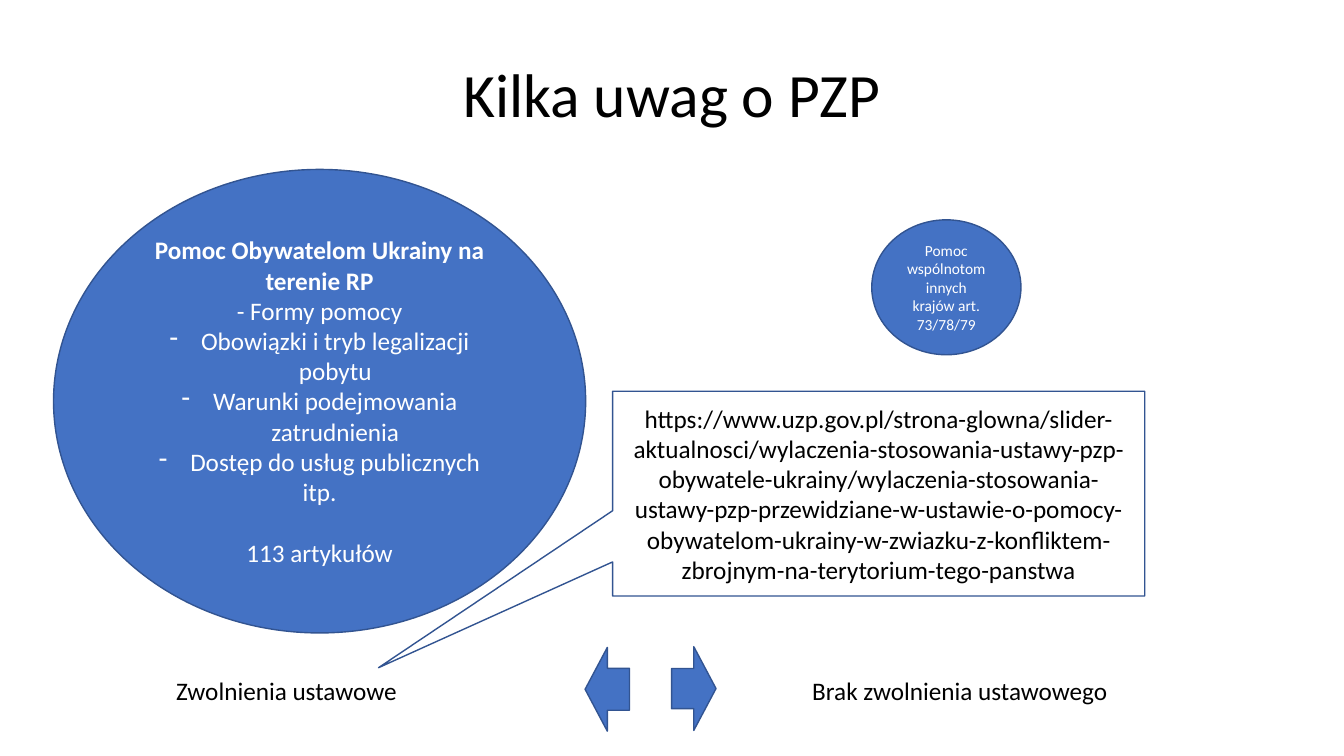
from lxml.etree import SubElement
from pptx import Presentation
from pptx.dml.color import RGBColor
from pptx.enum.shapes import MSO_SHAPE
from pptx.enum.text import MSO_ANCHOR, PP_ALIGN
from pptx.oxml.ns import qn
from pptx.util import Cm, Pt

BLUE, EDGE, WHITE, BLACK = "4472C4", "325491", "FFFFFF", "000000"

TITLE = [("Kilka uwag o PZP", {"line_spacing": 0.9})]
AID = [
    ("Pomoc Obywatelom Ukrainy na terenie RP", {"bold": True}),
    ("- Formy pomocy", {}),
    ("Obowiązki i tryb legalizacji pobytu", {"bullet": "-"}),
    ("Warunki podejmowania zatrudnienia", {"bullet": "-"}),
    ("Dostęp do usług publicznych", {"bullet": "-"}),
    ("itp.", {}),
    ("113 artykułów", {"space_before": Pt(22)}),
]
OTHERS = [("Pomoc wspólnotom innych krajów art. 73/78/79", {})]
LINK = [("https://www.uzp.gov.pl/strona-glowna/slider-aktualnosci/"
         "wylaczenia-stosowania-ustawy-pzp-obywatele-ukrainy/"
         "wylaczenia-stosowania-ustawy-pzp-przewidziane-w-ustawie-o-pomocy-"
         "obywatelom-ukrainy-w-zwiazku-z-konfliktem-zbrojnym-na-terytorium-tego-panstwa", {})]

SHAPES = [
    (MSO_SHAPE.OVAL, (1.35, 4.27, 13.41, 11.68), BLUE, 0, [], AID, 18, WHITE),
    (MSO_SHAPE.OVAL, (21.97, 5.54, 3.76, 3.4), BLUE, 0, [], OTHERS, 11, WHITE),
    (MSO_SHAPE.DOWN_ARROW, (14.25, 16.81, 2.11, 1.12), BLUE, 90, [], [], 18, WHITE),
    (MSO_SHAPE.DOWN_ARROW, (16.43, 16.79, 2.11, 1.12), BLUE, 270, [0.48, 0.5], [], 18, WHITE),
    (MSO_SHAPE.RECTANGULAR_CALLOUT, (15.44, 9.86, 13.41, 5.16), WHITE, 0,
     [-0.94, 0.85], LINK, 18, BLACK),
]
LABELS = [
    (TITLE, (2.33, 1.02, 29.21, 2.87), 44, PP_ALIGN.CENTER, MSO_ANCHOR.MIDDLE),
    ([("Zwolnienia ustawowe", {})], (4.19, 16.89, 9.25, 1.02), 18, PP_ALIGN.LEFT, MSO_ANCHOR.TOP),
    ([("Brak zwolnienia ustawowego", {})], (20.22, 16.89, 9.25, 1.02), 18,
     PP_ALIGN.LEFT, MSO_ANCHOR.TOP),
]


def rgb(value):
    return RGBColor.from_string(value)


def add_bullet(p, char):
    pPr = p._p.get_or_add_pPr()
    pPr.set("marL", str(Cm(0.79)))
    pPr.set("indent", str(-Cm(0.79)))
    SubElement(pPr, qn("a:buFontTx"))
    SubElement(pPr, qn("a:buChar")).set("char", char)


def write(sp, lines, size, color, align, anchor):
    tf = sp.text_frame
    tf.word_wrap = True
    tf.vertical_anchor = anchor
    for i, (text, extra) in enumerate(lines):
        p = tf.add_paragraph() if i else tf.paragraphs[0]
        r = p.add_run()
        r.text = text
        font = {"name": "Calibri", "size": Pt(size), "bold": extra.get("bold", False)}
        for key, value in font.items():
            setattr(r.font, key, value)
        r.font.color.rgb = rgb(color)
        layout = {"alignment": align}
        layout.update((k, v) for k, v in extra.items() if k not in ("bold", "bullet"))
        for key, value in layout.items():
            setattr(p, key, value)
        if "bullet" in extra:
            add_bullet(p, extra["bullet"])


def add_shape(s, kind, box, fill, turn, adjust, lines, size, color):
    sp = s.shapes.add_shape(kind, *map(Cm, box))
    sp.shadow.inherit = False
    sp.rotation = turn
    sp.fill.solid()
    sp.fill.fore_color.rgb = rgb(fill)
    sp.line.color.rgb = rgb(EDGE)
    sp.line.width = Pt(1)
    for i, value in enumerate(adjust):
        sp.adjustments[i] = value
    write(sp, lines, size, color, PP_ALIGN.CENTER, MSO_ANCHOR.MIDDLE)


def main():
    prs = Presentation()
    prs.slide_width, prs.slide_height = Cm(33.87), Cm(19.05)
    s = prs.slides.add_slide(prs.slide_layouts[6])
    for shape in SHAPES:
        add_shape(s, *shape)
    for lines, box, size, align, anchor in LABELS:
        write(s.shapes.add_textbox(*map(Cm, box)), lines, size, BLACK, align, anchor)
    prs.save("out.pptx")


if __name__ == "__main__":
    main()
